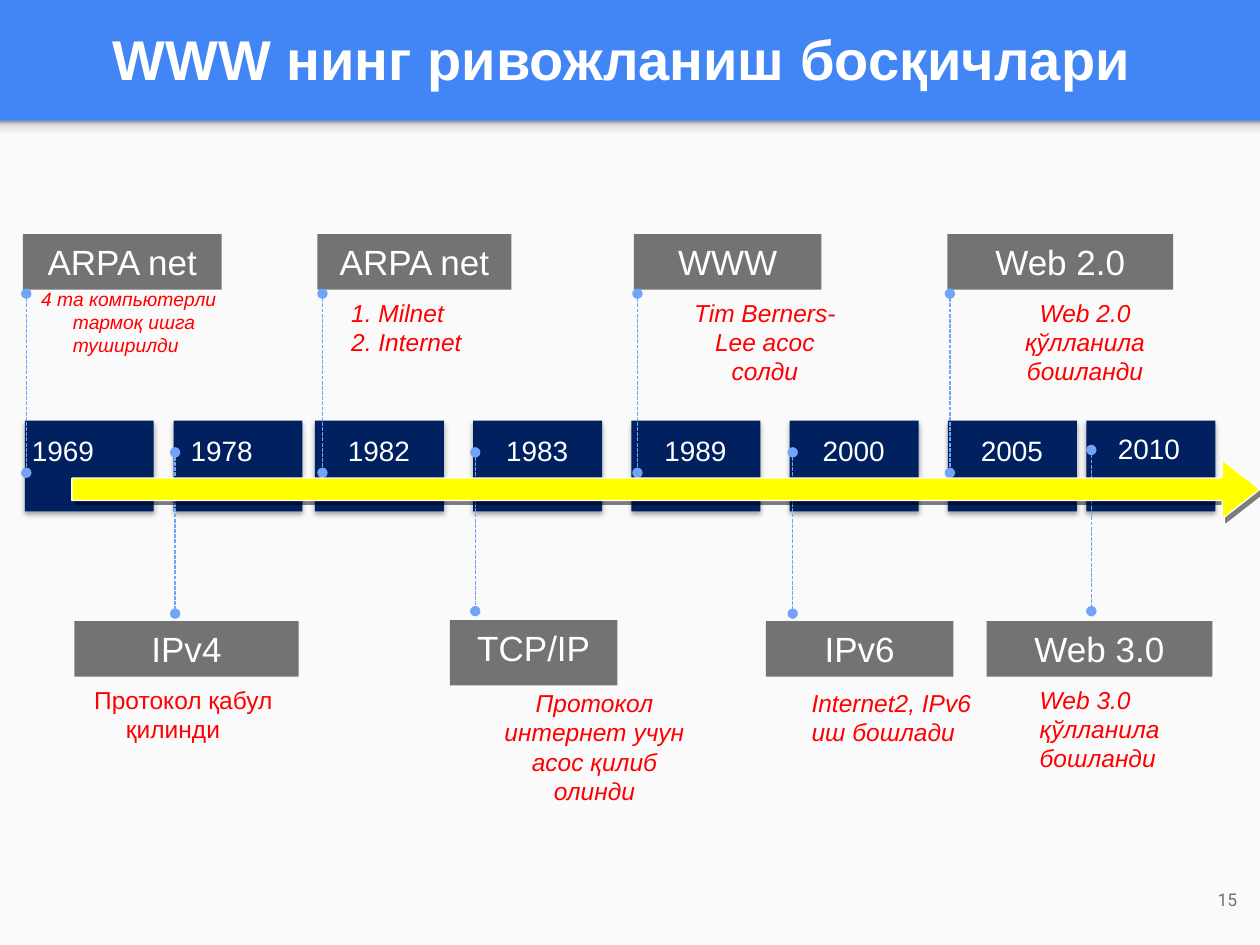
from lxml import etree
from pptx import Presentation
from pptx.dml.color import RGBColor
from pptx.enum.dml import MSO_LINE
from pptx.enum.shapes import MSO_CONNECTOR, MSO_SHAPE
from pptx.enum.text import MSO_ANCHOR, MSO_AUTO_SIZE, PP_ALIGN
from pptx.oxml import parse_xml
from pptx.oxml.ns import nsdecls, qn
from pptx.util import Cm, Pt

COLORS = {
    "blue": "4285F4", "panel": "FAFAFA", "navy": "002060", "gray": "737373",
    "red": "FF0000", "yellow": "FFFF00", "white": "FFFFFF", "line": "71A3F7",
}
STRIP_STOPS = [(0, "F9F9F9"), (36, "F9F9F9"), (80, "DEDEDE"), (100, "999999")]
BOX_SHADOW = (35, 3.1, 1.8, 90)
ARROW_SHADOW = (50, 0, 3, 45)

LEFT, CENTER, RIGHT = PP_ALIGN.LEFT, PP_ALIGN.CENTER, PP_ALIGN.RIGHT
BOX_TOP, BOX_W, BOX_H, BOX_STEP = 8.48, 2.6, 1.83, 3.19
LABEL_W, LABEL_H = 2.08, 0.97
HEAD_H, INDENT = 1.12, 0.64

# year, box left, label left, label top
YEARS = [("1969", 0.5, 0.23, 8.61), ("1978", 3.5, 3.43, 8.61)]
for i, year in enumerate(["1982", "1983", "1989", "2000", "2005"]):
    left = 6.35 + i * BOX_STEP
    YEARS.append((year, left, left + 0.25, 8.61))
YEARS.append(("2010", 21.9, 22.12, 8.58))

# heading, its box, note paragraphs, note box, note format
HANGING = {"left": INDENT, "first": -INDENT}
INDENTED = {"left": INDENT}
CENTERED = {"left": INDENT, "align": CENTER}
MILESTONES = [
    ("ARPA net", (0.46, 4.72, 4.01, HEAD_H), ["4 та компьютерли тармоқ ишга туширилди"],
     (0.58, 5.66, 4.11, 1.68), {"size": 11, **HANGING}),
    ("ARPA net", (6.4, 4.72, 3.91, HEAD_H), ["1. Milnet", "2. Internet"],
     (6.83, 5.87, 3.07, 1.45), {}),
    ("WWW", (12.78, 4.72, 3.78, HEAD_H), ["Tim Berners-Lee асос солди"],
     (12.93, 5.87, 4.34, 2.06), CENTERED),
    ("Web 2.0", (19.1, 4.72, 4.55, HEAD_H), ["Web 2.0 қўлланила бошланди"],
     (19.28, 5.87, 4.55, 2.06), CENTERED),
    ("IPv4", (1.5, 12.52, 4.52, HEAD_H), ["Протокол қабул қилинди"],
     (1.65, 13.67, 4.34, 1.45), {"italic": False, **HANGING}),
    ("TCP/IP", (9.07, 12.5, 3.38, 1.32), ["Протокол интернет учун асос қилиб олинди"],
     (9.19, 13.74, 4.95, 2.64), CENTERED),
    ("IPv6", (15.44, 12.52, 3.78, HEAD_H), ["Internet2, IPv6 иш бошлади"],
     (15.47, 13.74, 4.45, 1.45), INDENTED),
    ("Web 3.0", (19.89, 12.52, 4.55, HEAD_H), ["Web 3.0 қўлланила бошланди"],
     (20.07, 13.67, 4.55, 2.06), INDENTED),
]

# x, top, bottom
LEADERS = [(x, 5.92, 9.53) for x in (0.53, 6.5, 12.85, 19.15)] + [
    (3.53, 9.12, 12.37), (9.58, 9.12, 12.32), (15.98, 9.12, 12.37), (22, 9.07, 12.32)]


def rgb(name):
    return RGBColor.from_string(COLORS[name])


class TimelineSlide:
    def __init__(self, prs):
        self.font = "Arial"
        self.s = prs.slides.add_slide(prs.slide_layouts[5])
        fill = self.s.background.fill
        fill.solid()
        fill.fore_color.rgb = rgb("blue")

    def set_text(self, tf, lines, color, align=LEFT, left=0, first=0,
                 anchor=MSO_ANCHOR.TOP, inset=0.13, **font):
        margins = {"margin_left": Cm(0.25), "margin_right": Cm(0.25),
                   "margin_top": Cm(inset), "margin_bottom": Cm(inset)}
        frame = {"word_wrap": True, "auto_size": MSO_AUTO_SIZE.NONE, "vertical_anchor": anchor}
        for key, value in {**margins, **frame}.items():
            setattr(tf, key, value)
        style = {"name": self.font, "bold": False, "italic": False, **font}
        style["size"] = Pt(style["size"])
        for i, line in enumerate(lines):
            p = tf.paragraphs[0] if i == 0 else tf.add_paragraph()
            p.alignment = align
            pPr = p._p.get_or_add_pPr()
            pPr.set("marL", str(Cm(left)))
            pPr.set("indent", str(Cm(first)))
            r = p.add_run()
            r.text = line
            r.font.color.rgb = rgb(color)
            for key, value in style.items():
                setattr(r.font, key, value)

    def title(self, text, box):
        sp = self.s.shapes.title
        for key, value in zip(("left", "top", "width", "height"), box):
            setattr(sp, key, Cm(value))
        self.set_text(sp.text_frame, [text], "white", CENTER, size=32, bold=True,
                      anchor=MSO_ANCHOR.MIDDLE, inset=0.25)

    def text(self, lines, box, color, **style):
        sp = self.s.shapes.add_textbox(*map(Cm, box))
        self.set_text(sp.text_frame, lines, color, **style)

    def shape(self, box, color, kind=MSO_SHAPE.RECTANGLE, shadow=None):
        sp = self.s.shapes.add_shape(kind, *map(Cm, box))
        sp.fill.solid()
        sp.fill.fore_color.rgb = rgb(color)
        sp.line.fill.background()
        sp.shadow.inherit = False
        if shadow:
            self.cast_shadow(sp, *shadow)
        return sp

    def cast_shadow(self, sp, alpha, blur, dist, angle):
        effects = sp._element.spPr.find(qn("a:effectLst"))
        effects.append(parse_xml(
            f'<a:outerShdw {nsdecls("a")} blurRad="{Pt(blur)}" dist="{Pt(dist)}" '
            f'dir="{angle * 60000}" algn="tl" rotWithShape="0"><a:srgbClr val="000000">'
            f'<a:alpha val="{alpha * 1000}"/></a:srgbClr></a:outerShdw>'))

    def gradient_strip(self, box, stops):
        sp = self.shape(box, "panel")
        gs = "".join(f'<a:gs pos="{pos * 1000}"><a:srgbClr val="{c}"/></a:gs>' for pos, c in stops)
        spPr = sp._element.spPr
        spPr.replace(spPr.find(qn("a:solidFill")), parse_xml(
            f'<a:gradFill {nsdecls("a")} rotWithShape="1"><a:gsLst>{gs}</a:gsLst>'
            '<a:lin ang="16200000" scaled="0"/></a:gradFill>'))

    def heading(self, text, box):
        sp = self.shape(box, "gray")
        self.set_text(sp.text_frame, [text], "white", CENTER, size=20)

    def leader(self, x, top, bottom):
        """Dashed vertical line with a dot at each end."""
        cx = self.s.shapes.add_connector(MSO_CONNECTOR.STRAIGHT, Cm(x), Cm(top), Cm(x), Cm(bottom))
        cx.line.color.rgb = rgb("line")
        cx.line.width = Pt(0.75)
        cx.line.dash_style = MSO_LINE.SQUARE_DOT
        spPr = cx._element.spPr
        for end in ("a:headEnd", "a:tailEnd"):
            etree.SubElement(spPr.find(qn("a:ln")), qn(end), type="oval")
        etree.SubElement(spPr, qn("a:effectLst"))

    def time_arrow(self, box):
        sp = self.shape(box, "yellow", MSO_SHAPE.RIGHT_ARROW, ARROW_SHADOW)
        sp.adjustments[0], sp.adjustments[1] = 0.38, 0.64
        sp.line.color.rgb = rgb("white")
        sp.line.width = Pt(0.75)


def main():
    prs = Presentation()
    prs.slide_width, prs.slide_height = Cm(25.4), Cm(19.05)
    slide = TimelineSlide(prs)
    slide.shape((0, 2.44, 25.4, 16.61), "panel")
    slide.gradient_strip((0, 2.44, 25.4, 0.41), STRIP_STOPS)
    slide.title("WWW нинг ривожланиш босқичлари", (0.28, 0.05, 24.51, 2.24))
    for year, box_left, label_left, label_top in YEARS:
        slide.shape((box_left, BOX_TOP, BOX_W, BOX_H), "navy", shadow=BOX_SHADOW)
        slide.text([year], (label_left, label_top, LABEL_W, LABEL_H), "white",
                   align=CENTER, size=16)
    for heading, head_box, note, note_box, style in MILESTONES:
        slide.heading(heading, head_box)
        slide.text(note, note_box, "red", **{"size": 14, "italic": True, **style})
    for leader in LEADERS:
        slide.leader(*leader)
    slide.time_arrow((1.45, 9.27, 23.95, 1.19))
    slide.text(["15"], (23.67, 17.4, 1.52, 1.45), "gray", align=RIGHT, size=10,
               name="Roboto", anchor=MSO_ANCHOR.MIDDLE, inset=0.25)
    prs.save("out.pptx")


if __name__ == "__main__":
    main()
